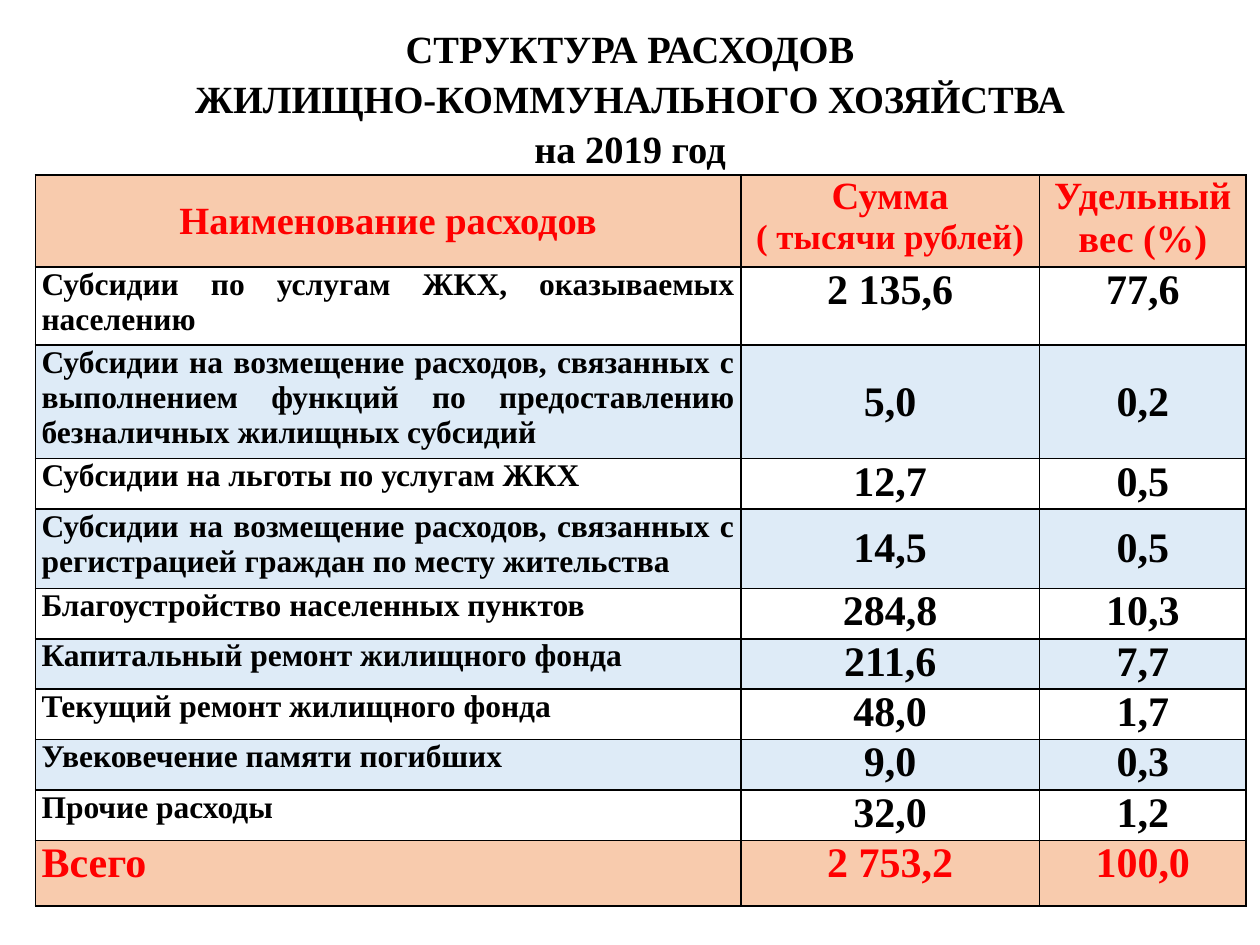
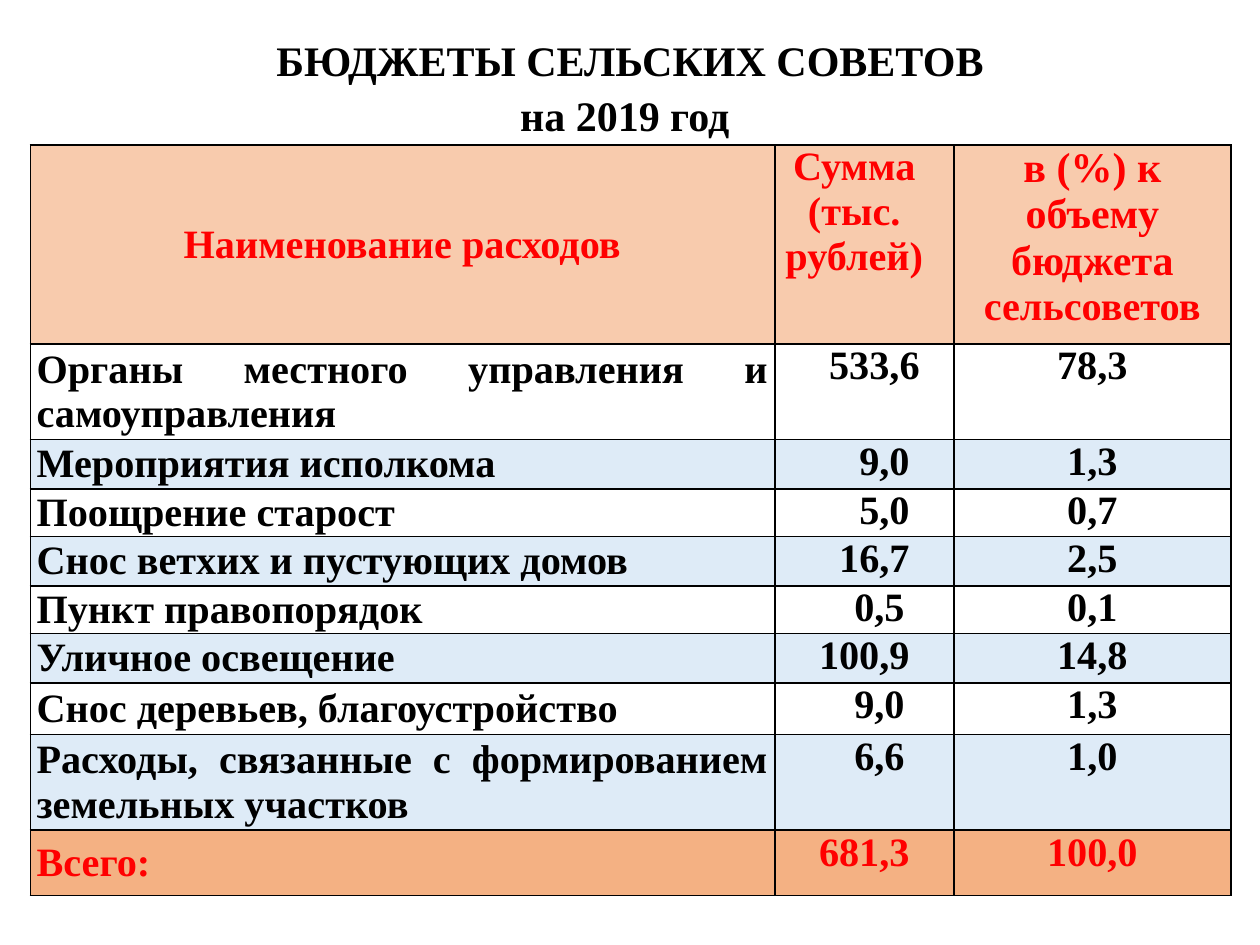
from dataclasses import dataclass

from lxml.etree import SubElement
from pptx import Presentation
from pptx.dml.color import RGBColor
from pptx.enum.text import MSO_ANCHOR, MSO_AUTO_SIZE, PP_ALIGN
from pptx.oxml.ns import qn
from pptx.util import Inches, Pt

FONT = "Times New Roman"
BLACK, RED, WHITE = "000000", "FF0000", "FFFFFF"
PEACH, ORANGE, BLUE = "F8CBAD", "F4B183", "DEEBF7"
MID, TOP = MSO_ANCHOR.MIDDLE, MSO_ANCHOR.TOP
PAD = 0.05
SPACE = 0.08  # width of one space in the sums column


@dataclass(frozen=True)
class Line:
    text: str
    size: float
    tail: float = 0  # right indent, inches


@dataclass(frozen=True)
class Row:
    name: str
    sum: str
    share: str
    high: float
    mid: bool = False  # numbers centred vertically
    shift: int = 0  # indent of the sum, in spaces


@dataclass(frozen=True)
class Page:
    title: tuple[str, ...]
    size: float
    top: float
    tall: float
    left: float
    start: float
    cols: tuple[float, ...]
    head: tuple[tuple[Line, ...], ...]
    crest: float  # height of the header row
    rows: tuple[Row, ...]
    text: float
    num: float
    total: float
    foot: str
    hold: MSO_ANCHOR  # anchor of the names


PAGES = (
    Page(
        title=("СТРУКТУРА РАСХОДОВ", "ЖИЛИЩНО-КОММУНАЛЬНОГО ХОЗЯЙСТВА", "на 2019 год"),
        size=22, top=0.15, tall=1.51, left=0.28, start=1.39,
        cols=(5.6, 2.37, 1.64),
        head=(
            (Line("Наименование расходов", 22),),
            (Line("Сумма", 22), Line("( тысячи рублей)", 20)),
            (Line("Удельный вес (%)", 22),),
        ),
        crest=0.73,
        rows=(
            Row("Субсидии по услугам ЖКХ, оказываемых населению", "2 135,6", "77,6", 0.62),
            Row("Субсидии на возмещение расходов, связанных с выполнением функций "
                "по предоставлению безналичных жилищных субсидий", "5,0", "0,2", 0.9, True),
            Row("Субсидии на льготы по услугам ЖКХ", "12,7", "0,5", 0.4),
            Row("Субсидии на возмещение расходов, связанных с регистрацией граждан "
                "по месту жительства", "14,5", "0,5", 0.63, True),
            Row("Благоустройство населенных пунктов", "284,8", "10,3", 0.4),
            Row("Капитальный ремонт жилищного фонда", "211,6", "7,7", 0.4),
            Row("Текущий ремонт жилищного фонда", "48,0", "1,7", 0.4),
            Row("Увековечение памяти погибших", "9,0", "0,3", 0.4),
            Row("Прочие расходы", "32,0", "1,2", 0.4),
            Row("Всего", "2 753,2", "100,0", 0.52),
        ),
        text=18, num=24, total=24, foot=PEACH, hold=TOP,
    ),
    Page(
        title=("БЮДЖЕТЫ СЕЛЬСКИХ СОВЕТОВ", "на 2019 год "),
        size=24, top=0.21, tall=1.21, left=0.24, start=1.15,
        cols=(5.91, 1.42, 2.2),
        head=(
            (Line("Наименование расходов", 23),),
            (Line("Сумма", 23, 2 * SPACE), Line("(тыс. рублей)", 23)),
            (Line("в (%) к объему бюджета", 24), Line("сельсоветов", 23)),
        ),
        crest=1.58,
        rows=(
            Row("Органы местного управления и самоуправления", "533,6", "78,3", 0.76, shift=2),
            Row("Мероприятия исполкома", "9,0", "1,3", 0.39, shift=4),
            Row("Поощрение старост", "5,0", "0,7", 0.38, shift=4),
            Row("Снос ветхих и пустующих домов", "16,7", "2,5", 0.39, shift=2),
            Row("Пункт правопорядок", "0,5", "0,1", 0.38, shift=3),
            Row("Уличное освещение", "100,9", "14,8", 0.39),
            Row("Снос деревьев, благоустройство", "9,0", "1,3", 0.41, shift=3),
            Row("Расходы, связанные с формированием земельных участков",
                "6,6", "1,0", 0.76, shift=3),
            Row("Всего:", "681,3", "100,0", 0.52),
        ),
        text=23, num=23, total=23, foot=ORANGE, hold=MID,
    ),
)


def rgb(code: str) -> RGBColor:
    return RGBColor.from_string(code)


def write(frame, lines: tuple[Line, ...], color: str, align=PP_ALIGN.CENTER, pitch=1.0) -> None:
    for i, line in enumerate(lines):
        para = frame.add_paragraph() if i else frame.paragraphs[0]
        para.alignment = align
        para.line_spacing = pitch
        if line.tail:
            para._p.get_or_add_pPr().set("marR", str(Inches(line.tail)))
        run = para.add_run()
        run.text = line.text
        for key, value in {"name": FONT, "size": Pt(line.size), "bold": True}.items():
            setattr(run.font, key, value)
        run.font.color.rgb = rgb(color)


def edge(cell) -> None:
    """Draw a thin black line on all four sides of a cell."""
    props = cell._tc.get_or_add_tcPr()
    for side in ("lnL", "lnR", "lnT", "lnB"):
        line = SubElement(props, qn(f"a:{side}"), w=str(Pt(1)))
        SubElement(SubElement(line, qn("a:solidFill")), qn("a:srgbClr"), val=BLACK)


def dress(cell, fill: str, anchor: MSO_ANCHOR, shift: int = 0) -> None:
    edge(cell)
    cell.fill.solid()
    cell.fill.fore_color.rgb = rgb(fill)
    look = {
        "margin_left": Inches(PAD + shift * SPACE), "margin_right": Inches(PAD),
        "margin_top": 0, "margin_bottom": 0, "vertical_anchor": anchor,
    }
    for key, value in look.items():
        setattr(cell, key, value)


def add_title(slide, page: Page) -> None:
    box = slide.shapes.title
    place = {"left": 0, "top": page.top, "width": 10, "height": page.tall}
    for key, value in place.items():
        setattr(box, key, Inches(value))
    frame = box.text_frame
    look = {
        "word_wrap": True, "auto_size": MSO_AUTO_SIZE.NONE, "vertical_anchor": MID,
        "margin_top": Inches(PAD), "margin_bottom": Inches(0.33),
    }
    for key, value in look.items():
        setattr(frame, key, value)
    write(frame, tuple(Line(text, page.size) for text in page.title), BLACK, pitch=1.08)


def add_grid(slide, page: Page) -> None:
    highs = (page.crest, *(row.high for row in page.rows))
    table = slide.shapes.add_table(
        len(highs), len(page.cols), Inches(page.left), Inches(page.start),
        Inches(sum(page.cols)), Inches(sum(highs)),
    ).table
    table.first_row = table.horz_banding = False
    for col, wide in zip(table.columns, page.cols):
        col.width = Inches(wide)
    for band, high in zip(table.rows, highs):
        band.height = Inches(high)

    for x, lines in enumerate(page.head):
        cell = table.cell(0, x)
        dress(cell, PEACH, TOP if x else MID)
        write(cell.text_frame, lines, RED)

    for y, row in enumerate(page.rows, 1):
        last = y == len(page.rows)
        fill = page.foot if last else WHITE if y % 2 else BLUE
        color = RED if last else BLACK
        for x, text in enumerate((row.name, row.sum, row.share)):
            cell = table.cell(y, x)
            numeric = x > 0
            anchor = (MID if row.mid else TOP) if numeric else page.hold
            dress(cell, fill, anchor, row.shift if x == 1 else 0)
            size = page.total if last else page.num if numeric else page.text
            align = PP_ALIGN.CENTER if numeric else PP_ALIGN.JUSTIFY
            write(cell.text_frame, (Line(text, size),), color, align)


def main() -> None:
    deck = Presentation()
    deck.slide_width, deck.slide_height = Inches(10), Inches(7.5)
    for page in PAGES:
        slide = deck.slides.add_slide(deck.slide_layouts[5])
        add_grid(slide, page)
        add_title(slide, page)
    deck.save("out.pptx")


if __name__ == "__main__":
    main()
